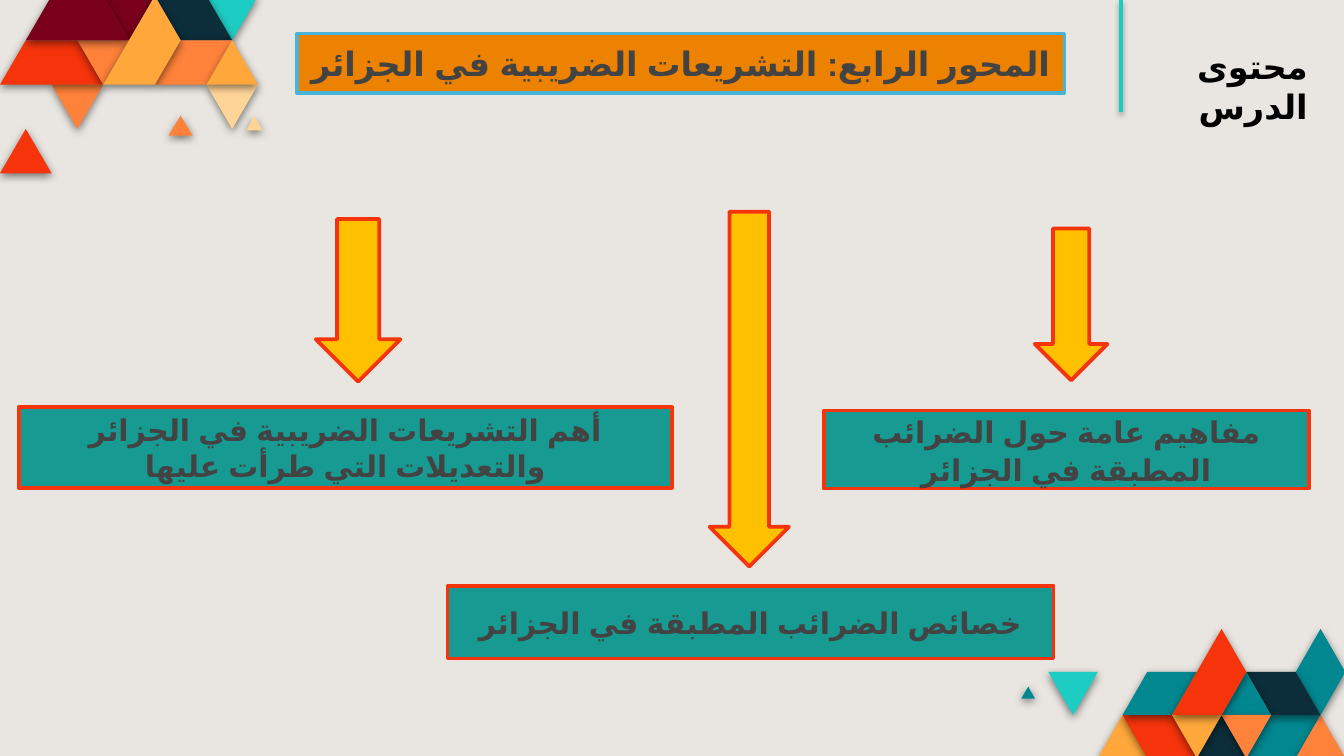
from lxml import etree
from pptx import Presentation
from pptx import util as u
from pptx.dml.color import RGBColor
from pptx.enum import lang, shapes, text
from pptx.oxml.ns import qn

PX = 4572
COLORS = {
    "paper": "E9E6E1", "maroon": "78001B", "red": "F5340B", "aqua": "1DCDC3",
    "navy": "0C2E3A", "amber": "FFA73B", "cream": "FFD497", "coral": "FF823B",
    "teal": "018790", "banner": "EC8200", "sky": "49B4D9", "gold": "FFC000",
    "topic": "169A92", "ink": "434343", "black": "000000",
}

TOP_TILES = [
    ("maroon", [(6, 0), (5, 1), (4, 0)]),
    ("aqua", [(10, 0), (9, 1), (8, 0)]),
    ("navy", [(9, 1), (7, 1), (6, 0), (8, 0)]),
    ("cream", [(10, 2), (9, 3), (8, 2)]),
    ("coral", [(7.47, 3.15), (6.53, 3.15), (7, 2.7)]),
    ("cream", [(10.17, 3.03), (9.55, 3.03), (9.86, 2.7)]),
    ("coral", [(9, 1), (8, 2), (6, 2), (7, 1)]),
    ("amber", [(10, 2), (8, 2), (9, 1)]),
    ("coral", [(4, 2), (3, 3), (2, 2)]),
    ("red", [(2, 4), (0, 4), (1, 3)]),
    ("red", [(4, 2), (0, 2), (1, 1), (3, 1)]),
    ("coral", [(5, 1), (4, 2), (3, 1)]),
    ("maroon", [(5, 1), (1, 1), (2, 0), (4, 0)]),
    ("amber", [(7, 1), (6, 2), (4, 2), (6, 0)]),
]
BOTTOM_TILES = [
    ("amber", [(2, 3), (3, 2), (4, 3)]),
    ("red", [(3, 2), (5, 2), (6, 3), (4, 3)]),
    ("teal", [(8, 3), (9, 2), (11, 2), (10, 3)]),
    ("coral", [(10, 3), (11, 2), (12, 3)]),
    ("navy", [(6, 3), (7, 2), (8, 3)]),
    ("teal", [(3, 2), (4, 1), (6, 1), (5, 2)]),
    ("teal", [(-1.09, 1.62), (-0.81, 1.34), (-0.54, 1.62)]),
    ("aqua", [(0, 1), (2, 1), (1, 2)]),
    ("teal", [(10, 1), (11, 0), (12, 1), (11, 2)]),
    ("navy", [(8, 1), (10, 1), (11, 2), (9, 2)]),
    ("teal", [(7, 2), (8, 1), (9, 2)]),
    ("coral", [(7, 2), (9, 2), (8, 3)]),
    ("amber", [(5, 2), (7, 2), (6, 3)]),
    ("red", [(5, 2), (7, 0), (8, 1), (7, 2)]),
]
TOPICS = [
    ((1540, 340, 108, 226), (1226, 611, 722, 116),
     "مفاهيم عامة حول الضرائب المطبقة في الجزائر", True, 1.07, 8),
    ((1056, 315, 118, 528), (666, 872, 902, 108),
     "خصائص الضرائب المطبقة في الجزائر", False, None, None),
    ((470, 326, 126, 242), (28, 606, 972, 120),
     "أهم التشريعات الضريبية في الجزائر والتعديلات التي طرأت عليها", True, None, None),
]


def color(name):
    """Return the named colour."""
    return RGBColor.from_string(COLORS[name])


def emu(box):
    """Turn px lengths into EMU."""
    return [u.Emu(round(length * PX)) for length in box]


def cast_shadow(shape, blur, distance, opacity):
    """Give a shape or connector a soft shadow straight below it."""
    effects = etree.SubElement(shape._element.spPr, qn("a:effectLst"))
    shadow = etree.SubElement(
        effects, qn("a:outerShdw"), blurRad=str(u.Pt(blur)),
        dist=str(u.Pt(distance)), dir="5400000", algn="bl", rotWithShape="0")
    tint = etree.SubElement(shadow, qn("a:srgbClr"), val=COLORS["black"])
    etree.SubElement(tint, qn("a:alpha"), val=str(opacity * 1000))


def write(frame, words, size, ink, align, rtl=False):
    """Write one bold Arabic run into a text frame and return its paragraph."""
    frame.word_wrap = True
    para = frame.paragraphs[0]
    para.alignment = align
    if rtl:
        para._p.get_or_add_pPr().set("rtl", "1")
    span = para.add_run()
    span.text = words
    span.font.size = u.Pt(size)
    span.font.bold = True
    span.font.color.rgb = color(ink)
    span.font.name = "Arial"
    span.font.language_id = lang.MSO_LANGUAGE_ID.ARABIC_ALGERIA
    etree.SubElement(span.font._element, qn("a:cs"), typeface="Arial")
    return para


def add_block(page, kind, box, fill, line):
    """Add a filled and outlined preset shape."""
    block = page.shapes.add_shape(kind, *emu(box))
    block.shadow.inherit = False
    block.fill.solid()
    block.fill.fore_color.rgb = color(fill)
    block.line.color.rgb = color(line)
    block.line.width = u.Pt(2)
    block.text_frame.vertical_anchor = text.MSO_ANCHOR.MIDDLE
    return block


def add_mosaic(page, box, columns, rows, tiles):
    """Lay a group of tiles on a lattice that divides the box."""
    left, top, width, height = box
    group = page.shapes.add_group_shape()
    for fill, corners in tiles:
        points = [emu((left + column * width / columns, top + row * height / rows))
                  for column, row in corners]
        outline = group.shapes.build_freeform(*points[0])
        outline.add_line_segments(points[1:], close=True)
        tile = outline.convert_to_shape()
        tile.fill.solid()
        tile.fill.fore_color.rgb = color(fill)
        tile.line.fill.background()
        cast_shadow(tile, 4.5, 1.5, 50)


def add_heading(page, box):
    """Place the title with the rule that hangs to its left."""
    left, top, width, height = box
    title = page.shapes.title
    title.left, title.top, title.width, title.height = emu(box)
    frame = title.text_frame
    frame.auto_size = text.MSO_AUTO_SIZE.NONE
    frame.vertical_anchor = text.MSO_ANCHOR.TOP
    write(frame, "محتوى الدرس", 18, "black", text.PP_ALIGN.RIGHT)
    rule = page.shapes.add_connector(
        shapes.MSO_CONNECTOR.STRAIGHT, *emu((left - 20, 0, left - 20, top + height + 29)))
    rule.line.color.rgb = color("aqua")
    rule.line.width = u.Pt(2)
    cast_shadow(rule, 3.1, 1.6, 38)


def add_banner(page, box):
    """Add the banner that names the chapter."""
    banner = add_block(page, shapes.MSO_SHAPE.FLOWCHART_PROCESS, box, "banner", "sky")
    write(banner.text_frame, "المحور الرابع: التشريعات الضريبية في الجزائر",
          18, "ink", text.PP_ALIGN.CENTER)


def add_topic(page, arrow_box, box, words, rtl, spacing, after):
    """Add a topic box and the arrow that leads to it."""
    add_block(page, shapes.MSO_SHAPE.DOWN_ARROW, arrow_box, "gold", "red")
    topic = add_block(page, shapes.MSO_SHAPE.RECTANGLE, box, "topic", "red")
    para = write(topic.text_frame, words, 16, "ink", text.PP_ALIGN.CENTER, rtl)
    if spacing:
        para.line_spacing = spacing
        para.space_after = u.Pt(after)


def main():
    """Build the lesson contents slide."""
    deck = Presentation()
    deck.slide_width, deck.slide_height = emu((2000, 1125))
    page = deck.slides.add_slide(deck.slide_layouts[5])
    page.background.fill.solid()
    page.background.fill.fore_color.rgb = color("paper")
    add_mosaic(page, (0, -6, 384, 264), 10, 4, TOP_TILES)
    add_mosaic(page, (1560, 936, 442, 192), 12, 3, BOTTOM_TILES)
    add_heading(page, (1688, 58, 278, 80))
    add_banner(page, (442, 50, 1142, 88))
    for topic in TOPICS:
        add_topic(page, *topic)
    deck.save("out.pptx")


if __name__ == "__main__":
    main()
